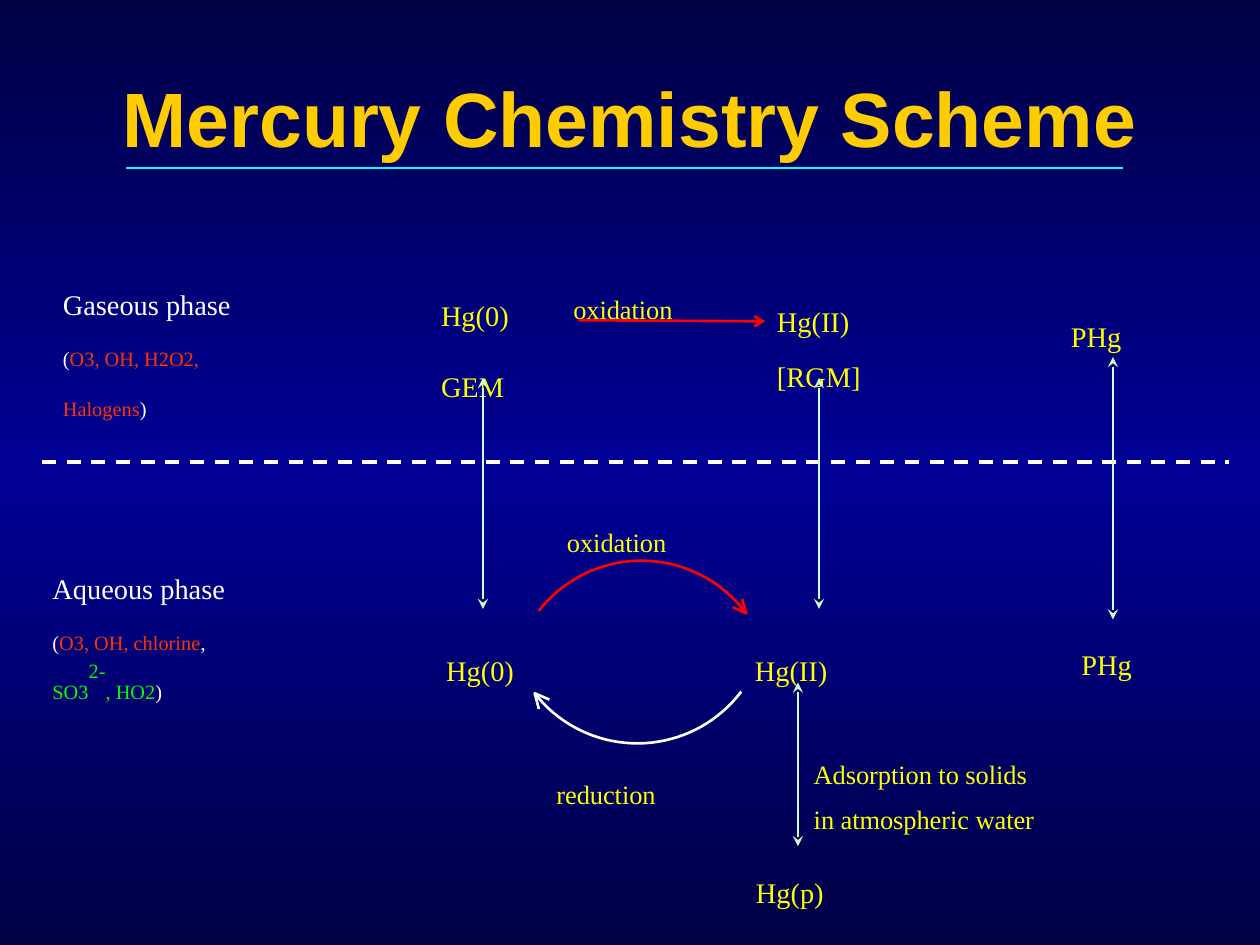
from copy import deepcopy
from dataclasses import dataclass
from math import cos, radians, sin

from pptx import Presentation
from pptx.dml.color import RGBColor as RGB
from pptx.enum.dml import MSO_LINE_DASH_STYLE as Dash
from pptx.enum.shapes import MSO_CONNECTOR as Conn
from pptx.enum.text import MSO_ANCHOR as Anchor, PP_ALIGN as Align
from pptx.oxml.ns import qn
from pptx.util import Inches, Pt


@dataclass(frozen=True)
class Theme:
    edge: str = "000045"
    middle: str = "000096"
    gold: str = "FFCC00"
    cyan: str = "00FFFF"
    white: str = "FFFFFF"
    yellow: str = "FFFF00"
    orange: str = "FF3300"
    green: str = "00FF00"
    red: str = "FF0000"
    mint: str = "CCFFCC"
    heading_font: str = "Arial"
    body_font: str = "Times New Roman"
    title: int = 44
    species: int = 28
    process: int = 26
    reagent: int = 20
    lowered: int = -30000
    raised: int = 30000


class Scheme:
    COLS, ROWS = 120, 90

    def __init__(self, prs, theme):
        self.theme = theme
        self.width, self.height = prs.slide_width, prs.slide_height
        self.s = prs.slides.add_slide(prs.slide_layouts[5])

    def x(self, col):
        return round(self.width * col / self.COLS)

    def y(self, row):
        return round(self.height * row / self.ROWS)

    def background(self):
        fill = self.s.background.fill
        fill.gradient()
        fill.gradient_angle = 270
        for stop in fill.gradient_stops:
            stop.color.rgb = RGB.from_string(self.theme.edge)
        first = self.s.background._cSld.find(".//" + qn("a:gs"))
        first.addnext(deepcopy(first))
        middle = fill.gradient_stops[1]
        middle.position = 0.5
        middle.color.rgb = RGB.from_string(self.theme.middle)

    def run(self, p, text, size, color, font, bold=False):
        r = p.add_run()
        r.text = text
        r.font.size, r.font.name, r.font.bold = Pt(size), font, bold
        r.font.color.rgb = RGB.from_string(color)
        return r

    def title(self, text, col, row, cols, rows):
        sp = self.s.shapes.title
        sp.left, sp.top = self.x(col), self.y(row)
        sp.width, sp.height = self.x(cols), self.y(rows)
        tf = sp.text_frame
        tf.vertical_anchor = Anchor.MIDDLE
        p = tf.paragraphs[0]
        p.alignment = Align.CENTER
        t = self.theme
        self.run(p, text, t.title, t.gold, t.heading_font, True)

    def text(self, col, row, cols, rows, lines, spacings=(), before=0):
        sp = self.s.shapes.add_textbox(
            self.x(col), self.y(row), self.x(cols), self.y(rows))
        tf = sp.text_frame
        tf.word_wrap = True
        tf.margin_left = tf.margin_right = tf.margin_top = tf.margin_bottom = 0
        for i, (size, runs) in enumerate(lines):
            p = tf.add_paragraph() if i else tf.paragraphs[0]
            if spacings:
                p.line_spacing = spacings[i]
            if i and before:
                p.space_before = Pt(before)
            for text, color, *shift in runs:
                r = self.run(p, text, size, color, self.theme.body_font)
                baseline = shift[0] if shift else self.theme.lowered
                r.font._element.set("baseline", str(baseline))

    def label(self, col, row, cols, rows, size, *words, **spacing):
        lines = [(size, [(word, self.theme.yellow)]) for word in words]
        self.text(col, row, cols, rows, lines, **spacing)

    def line(self, start, end, color, width, head=None, tail=None, dash=None):
        c = self.s.shapes.add_connector(
            Conn.STRAIGHT, self.x(start[0]), self.y(start[1]),
            self.x(end[0]), self.y(end[1]))
        c.line.color.rgb = RGB.from_string(color)
        c.line.width = Pt(width)
        if dash:
            c.line.dash_style = dash
        ln = c.line._get_or_add_ln()
        for tag, kind in (("a:headEnd", head), ("a:tailEnd", tail)):
            if kind:
                ln.append(ln.makeelement(qn(tag), {"type": kind}))
        spPr = c._element.spPr
        spPr.append(spPr.makeelement(qn("a:effectLst"), {}))

    def exchange(self, col, top, bottom):
        self.line((col, top), (col, bottom), self.theme.mint, 1.5,
                  "stealth", "stealth")

    def outline(self, points, color):
        (x0, y0), *rest = [(self.x(a), self.y(b)) for a, b in points]
        fb = self.s.shapes.build_freeform(x0, y0)
        fb.add_line_segments(rest, close=False)
        sp = fb.convert_to_shape()
        sp.shadow.inherit = False
        sp.fill.background()
        sp.line.color.rgb = RGB.from_string(color)
        sp.line.width = Pt(1.5)

    def arc(self, col, row, radius, start, end, barbs, color):
        steps = 36
        angles = [radians(start + (end - start) * i / steps)
                  for i in range(steps + 1)]
        points = [(col + radius * cos(a), row - radius * sin(a))
                  for a in angles]
        tip = points[-1]
        self.outline(points, color)
        (ax, ay), (bx, by) = barbs
        self.outline([(tip[0] + ax, tip[1] + ay), tip,
                      (tip[0] + bx, tip[1] + by)], color)


def main():
    prs = Presentation()
    prs.slide_width, prs.slide_height = Inches(10), Inches(7.5)
    t = Theme()
    d = Scheme(prs, t)
    d.background()
    d.title("Mercury Chemistry Scheme", 6, 3.6, 108, 15)
    d.line((12, 16), (107, 16), t.cyan, 0.75)

    d.text(6, 24, 27.6, 13.6, [
        (t.species, [("Gaseous phase", t.white)]),
        (t.reagent, [("(", t.white), ("O3, OH, H2O2,", t.orange)]),
        (t.reagent, [("Halogens", t.orange), (")", t.white)])])
    d.text(5, 51, 28.3, 13.6, [
        (t.species, [("Aqueous phase", t.white)]),
        (t.reagent, [("(", t.white), ("O3, OH, chlorine", t.orange),
                     (",", t.white)]),
        (t.reagent, [("SO3", t.green), ("2-", t.green, t.raised),
                     (", HO2", t.green), (")", t.white)])])

    d.label(42, 25, 11.2, 10, t.species, "Hg(0)", "GEM",
            spacings=(1.0, 0.8), before=4)
    d.label(74, 26, 16, 9, t.species, "Hg(II)", "[RGM]", spacings=(0.8, 0.8))
    d.label(77.5, 70, 36.4, 7.3, t.process, "Adsorption to solids",
            "in atmospheric water", spacings=(0.7, 0.7))
    for word, col, row in (("PHg", 102, 27), ("Hg(0)", 42.5, 58.8),
                           ("Hg(II)", 71.9, 58.8), ("Hg(p)", 72, 80),
                           ("PHg", 103, 58.3)):
        d.label(col, row, 12, 5.6, t.species, word)
    for word, col, row in (("oxidation", 54.6, 24.8), ("oxidation", 54, 47),
                           ("reduction", 53, 71)):
        d.label(col, row, 16.3, 5.2, t.process, word)

    d.arc(61.1, 65.8, 12.4, 142, 36.5, ((-1.3, -0.6), (-0.4, -1.4)), t.red)
    d.arc(60.7, 58.4, 12.4, -37, -142, ((1.4, 0.6), (0.4, 1.5)), t.white)
    d.line((55.1, 30.5), (72.9, 30.6), t.red, 1.5, tail="arrow")
    d.line((4, 44), (117, 44), t.white, 2, dash=Dash.DASH)
    for col, top, bottom in ((106, 34, 59), (78, 36, 58),
                             (76, 65, 80.6), (46, 36, 58)):
        d.exchange(col, top, bottom)
    prs.save("out.pptx")


if __name__ == "__main__":
    main()
